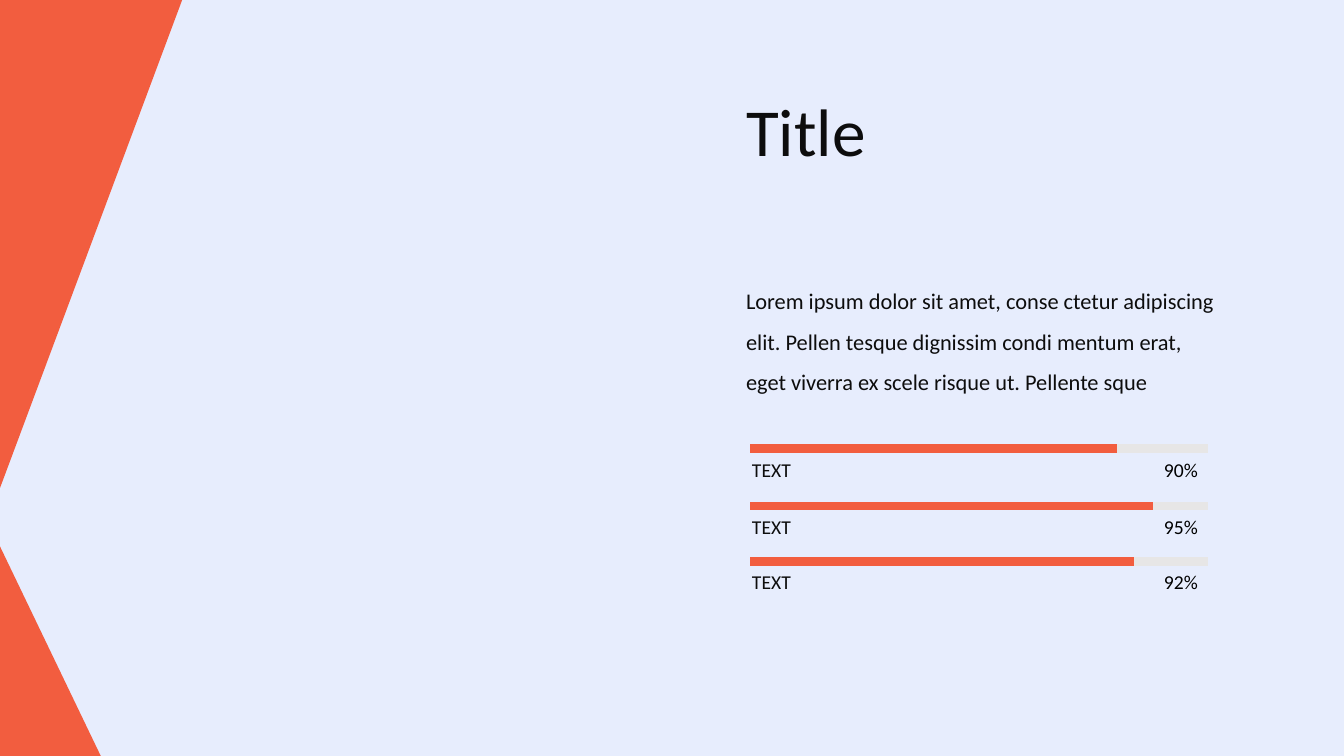
from lxml import etree
from pptx import Presentation
from pptx.dml.color import RGBColor
from pptx.enum.shapes import MSO_CONNECTOR, MSO_SHAPE
from pptx.enum.text import MSO_ANCHOR, MSO_AUTO_SIZE, PP_ALIGN
from pptx.oxml.ns import qn
from pptx.util import Inches, Pt

BACKGROUND = RGBColor(0xE7, 0xED, 0xFD)
ORANGE = RGBColor(0xF2, 0x5D, 0x3F)
TRACK = RGBColor(0xE7, 0xE6, 0xE6)
INK = RGBColor(0x0D, 0x0D, 0x0D)
BLACK = RGBColor(0, 0, 0)
FONT = "Calibri"

BODY = ("Lorem ipsum dolor sit amet, conse ctetur adipiscing elit. "
        "Pellen tesque dignissim condi mentum erat, eget viverra ex "
        "scele risque ut. Pellente sque")
# Label, value, length of the filled part, distance below the first bar
BARS = [("TEXT", "90%", 3.64, 0),
        ("TEXT", "95%", 4.00, 0.57),
        ("TEXT", "92%", 3.81, 1.12)]


def write_text(sp, text, size, color, align=PP_ALIGN.LEFT, spacing=1.0):
    tf = sp.text_frame
    tf.word_wrap = True
    tf.auto_size = MSO_AUTO_SIZE.NONE
    tf.vertical_anchor = MSO_ANCHOR.TOP
    p = tf.paragraphs[0]
    p.alignment = align
    p.line_spacing = spacing
    p.space_before = Pt(0)
    r = p.add_run()
    r.text = text
    r.font.name = FONT
    r.font.size = Pt(size)
    r.font.color.rgb = color
    return p


def place(sp, x, y, w, h):
    sp.left, sp.top = Inches(x), Inches(y)
    sp.width, sp.height = Inches(w), Inches(h)


def add_label(slide, x, y, w, text, color, align):
    sp = slide.shapes.add_textbox(Inches(x), Inches(y), Inches(w), Inches(0.37))
    write_text(sp, text, 14, color, align)


def add_bar(slide, x, y, length, color):
    line = slide.shapes.add_connector(MSO_CONNECTOR.STRAIGHT, Inches(x), Inches(y),
                                      Inches(x + length), Inches(y))
    line.line.color.rgb = color
    line.line.width = Pt(6)
    etree.SubElement(line._element.spPr, qn("a:effectLst"))


def add_corner(slide, x, y, w, h, upside_down=False):
    sp = slide.shapes.add_shape(MSO_SHAPE.RIGHT_TRIANGLE, Inches(x), Inches(y),
                                Inches(w), Inches(h))
    sp.shadow.inherit = False
    sp.fill.solid()
    sp.fill.fore_color.rgb = ORANGE
    sp.line.fill.background()
    if upside_down:
        sp.rotation = 180
        sp._element.spPr.find(qn("a:xfrm")).set("flipH", "1")


def add_heading(slide, x, y):
    # Title
    title = slide.shapes.title
    place(title, x, y, 3.81, 0.91)
    write_text(title, "Title", 48, INK)
    # Paragraph without a bullet
    body = slide.placeholders[1]
    place(body, x, y + 1.83, 4.86, 1.27)
    p = write_text(body, BODY, 16, INK, spacing=1.5)
    pPr = p._p.get_or_add_pPr()
    pPr.set("marL", "0")
    pPr.set("indent", "0")
    etree.SubElement(pPr, qn("a:buNone"))


def add_progress(slide, x, y, w):
    for label, value, filled, offset in BARS:
        bar_y = y + offset
        add_bar(slide, x, bar_y, w, TRACK)
        add_bar(slide, x, bar_y, filled, ORANGE)
        add_label(slide, x + w - 0.73, bar_y + 0.04, 0.73, value, BLACK, PP_ALIGN.RIGHT)
        add_label(slide, x - 0.08, bar_y + 0.04, 1.19, label, INK, PP_ALIGN.LEFT)


def main():
    prs = Presentation()
    prs.slide_width, prs.slide_height = Inches(13.33), Inches(7.5)
    slide = prs.slides.add_slide(prs.slide_layouts[1])
    slide.background.fill.solid()
    slide.background.fill.fore_color.rgb = BACKGROUND
    # Corner triangles on the left edge
    add_corner(slide, 0, 5.42, 1, 2.08)
    add_corner(slide, 0, -0.01, 1.81, 4.85, upside_down=True)
    # Right column
    add_heading(slide, 7.3, 0.84)
    add_progress(slide, 7.44, 4.45, 4.54)
    prs.save("out.pptx")


if __name__ == "__main__":
    main()
